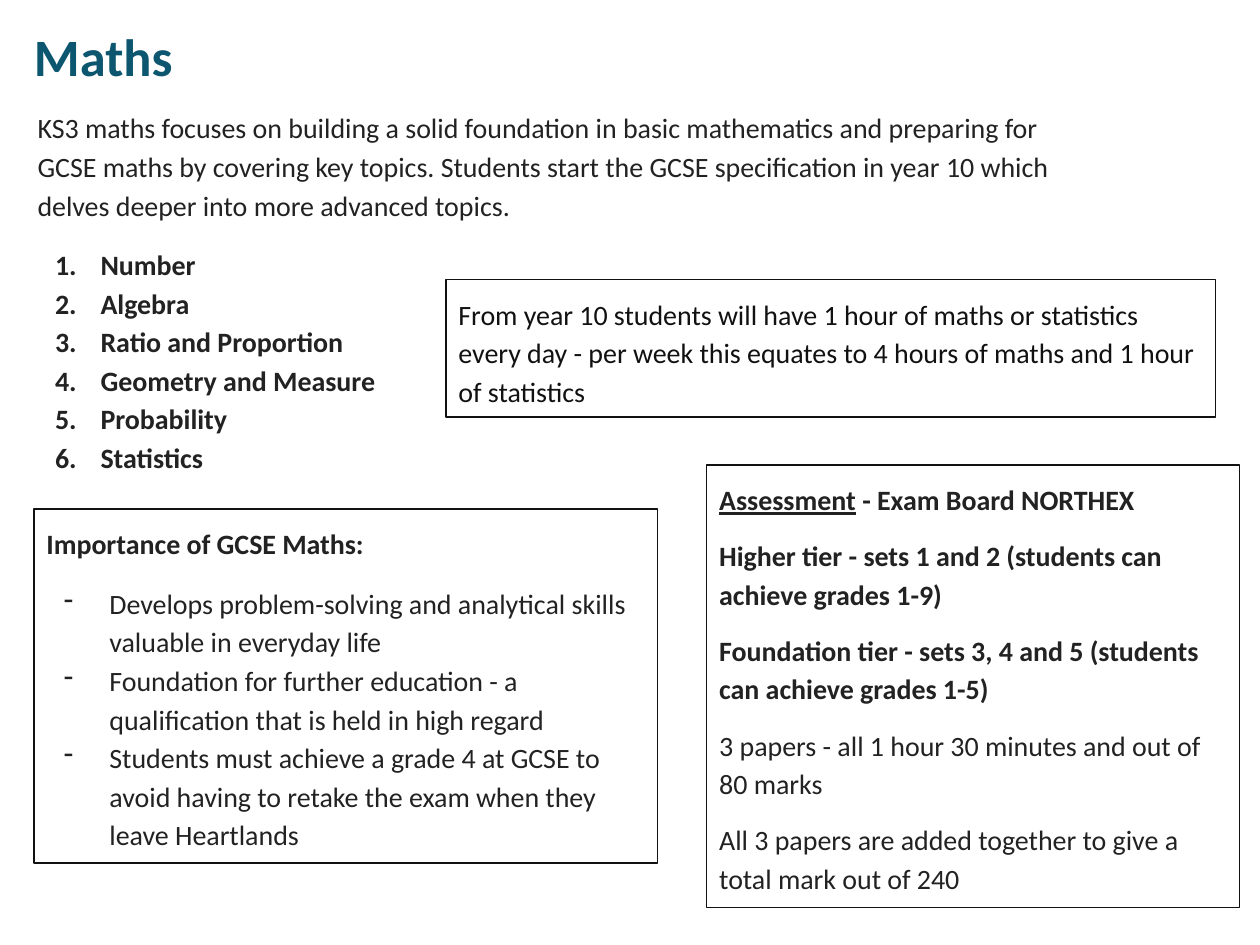
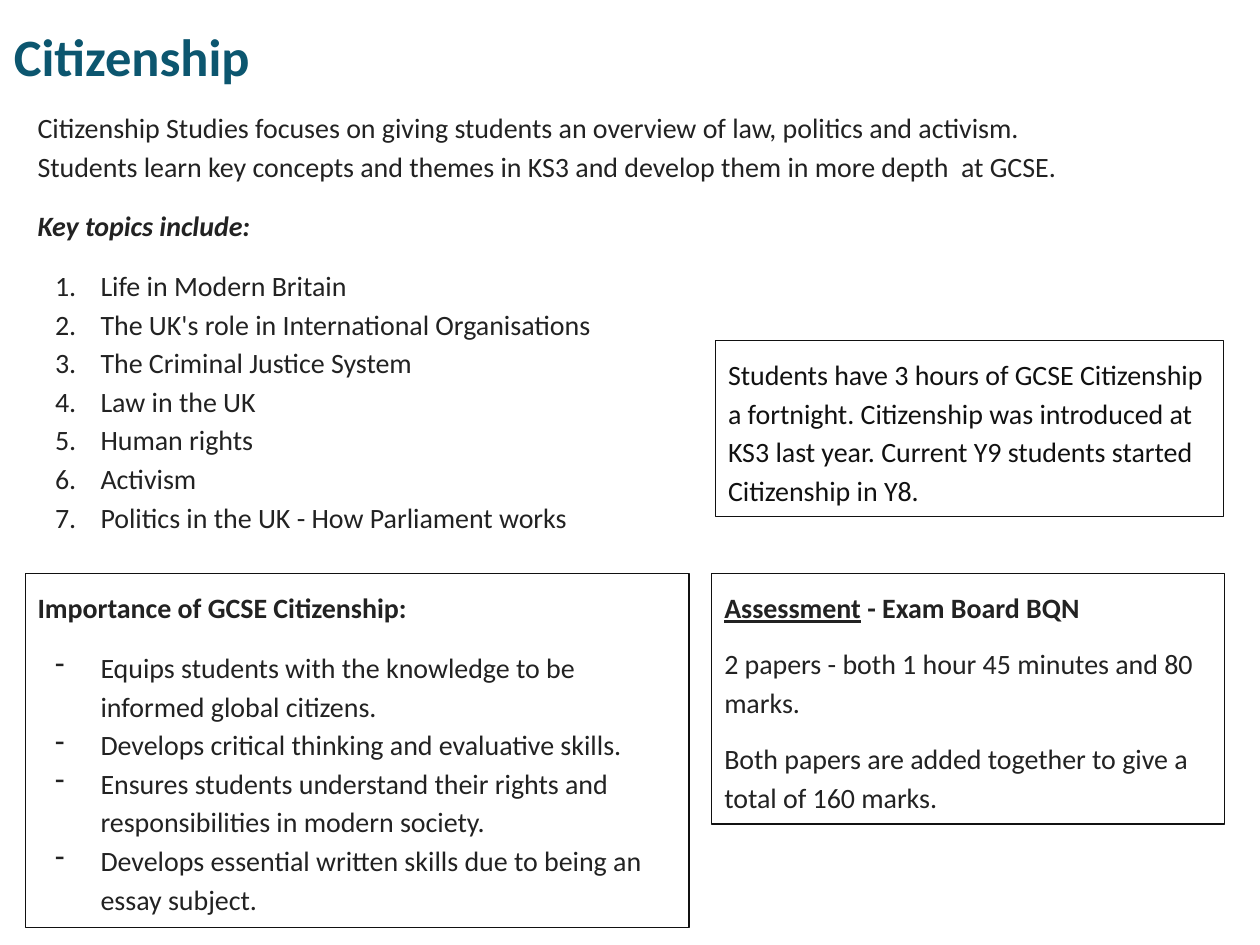
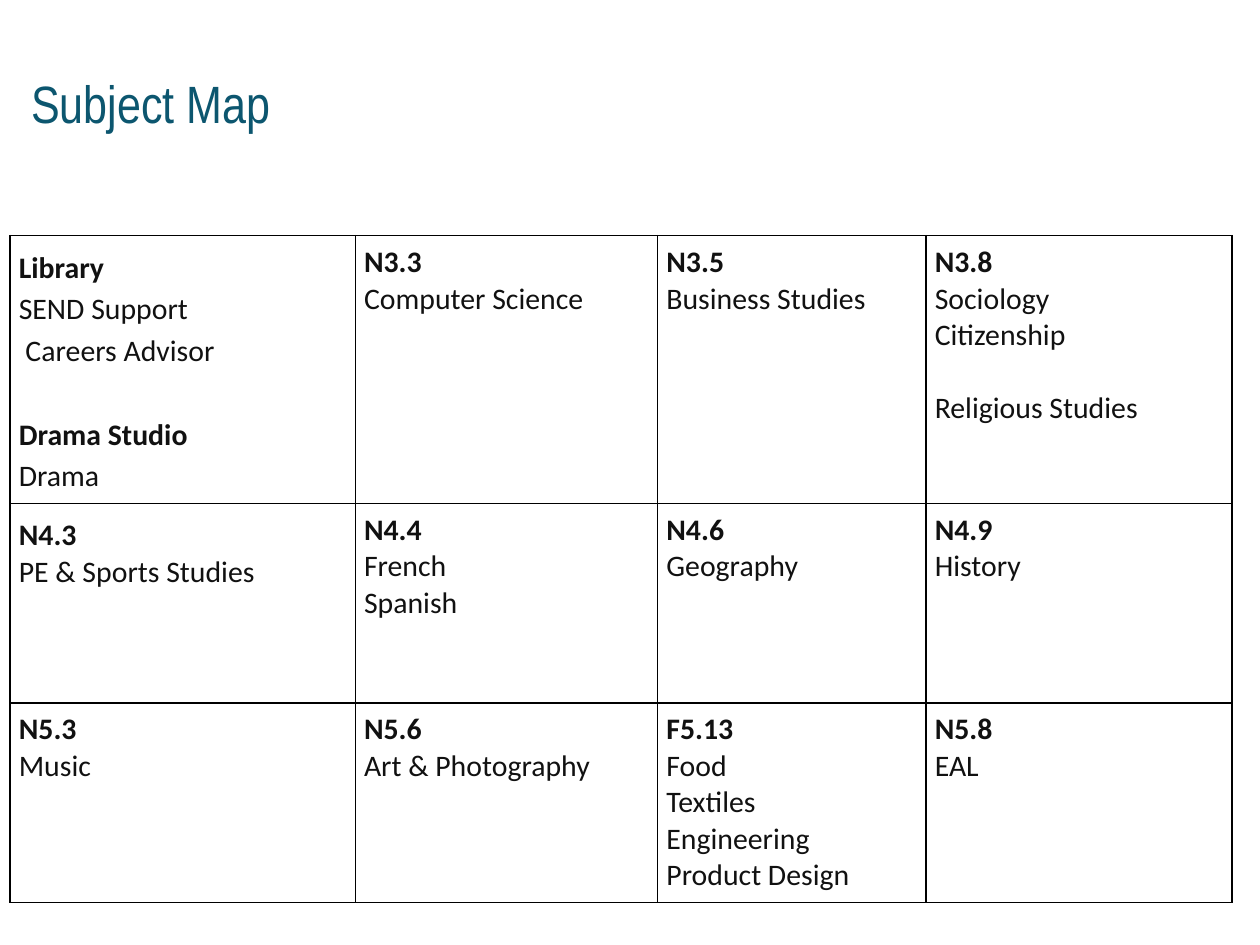
from lxml.etree import SubElement
from pptx import Presentation
from pptx.dml.color import RGBColor
from pptx.enum.shapes import MSO_SHAPE
from pptx.enum.text import MSO_ANCHOR, PP_ALIGN
from pptx.oxml.ns import qn
from pptx.util import Pt

COLOURS = {"title": "0C566F", "body": "222222", "dark": "111111", "grid": "000000"}
BODY_FONT = "Calibri"
MAP_FONT = "Arial Narrow"
LOOSE = 1.15  # line spacing
INSET = 7.2
HANGING = 26

SUBJECTS = [
    {
        "title": "Maths",
        "title_at": (19.44, 18.72, 561.6, 30.96),
        "intro_at": (14.4, 53.28, 622.08, 224.64),
        "intro": "KS3 maths focuses on building a solid foundation in basic mathematics and preparing "
                 "for GCSE maths by covering key topics. Students start the GCSE specification in "
                 "year 10 which delves deeper into more advanced topics.",
        "topics_heading": None,
        "topics_bold": True,
        "topics": ["Number", "Algebra", "Ratio and Proportion", "Geometry and Measure",
                   "Probability", "Statistics"],
        "assessment_at": (403.92, 265.68, 304.56, 252.72),
        "exam_board": "NORTHEX",
        "tiers": ["Higher tier - sets 1 and 2 (students can achieve grades 1-9)",
                  "Foundation tier - sets 3, 4 and 5 (students can achieve grades 1-5)"],
        "papers": ["3 papers - all 1 hour 30 minutes and out of 80 marks",
                   "All 3 papers are added together to give a total mark out of 240"],
        "importance_at": (19.44, 290.88, 356.4, 202.32),
        "reasons": ["Develops problem-solving and analytical skills valuable in everyday life",
                    "Foundation for further education - a qualification that is held in high regard",
                    "Students must achieve a grade 4 at GCSE to avoid having to retake the exam "
                    "when they leave Heartlands"],
        "hours_at": (254.88, 159.84, 439.92, 78.48),
        "hours": "From year 10 students will have 1 hour of maths or statistics every day - per week "
                 "this equates to 4 hours of maths and 1 hour of statistics",
    },
    {
        "title": "Citizenship",
        "title_at": (7.92, 18.72, 561.6, 30.96),
        "intro_at": (14.4, 53.28, 614.16, 259.2),
        "intro": "Citizenship Studies focuses on giving students an overview of law, politics and "
                 "activism. Students learn key concepts and themes in KS3 and develop them in more "
                 "depth  at GCSE.",
        "topics_heading": "Key topics include:",
        "topics_bold": False,
        "topics": ["Life in Modern Britain", "The UK's role in International Organisations",
                   "The Criminal Justice System", "Law in the UK", "Human rights", "Activism",
                   "Politics in the UK - How Parliament works"],
        "assessment_at": (406.8, 327.6, 293.04, 143.28),
        "exam_board": "BQN",
        "tiers": [],
        "papers": ["2 papers - both 1 hour 45 minutes and 80 marks.",
                   "Both papers are added together to give a total of 160 marks."],
        "importance_at": (14.4, 327.6, 379.44, 202.32),
        "reasons": ["Equips students with the knowledge to be informed global citizens.",
                    "Develops critical thinking and evaluative skills.",
                    "Ensures students understand their rights and responsibilities in modern society.",
                    "Develops essential written skills due to being an essay subject."],
        "hours_at": (408.96, 194.4, 290.16, 100.8),
        "hours": "Students have 3 hours of GCSE Citizenship a fortnight. Citizenship was introduced "
                 "at KS3 last year. Current Y9 students started Citizenship in Y8.",
    },
]

# Each cell holds groups of (room, subject, ...); a blank line's height parts the groups.
ROOM_MAP = [
    [[("Library", "SEND Support", " Careers Advisor"), ("Drama Studio", "Drama")],
     [("N3.3", "Computer Science")],
     [("N3.5", "Business Studies")],
     [("N3.8", "Sociology", "Citizenship"), ("", "Religious Studies")]],
    [[("N4.3", "PE & Sports Studies")],
     [("N4.4", "French", "Spanish")],
     [("N4.6", "Geography")],
     [("N4.9", "History")]],
    [[("N5.3", "Music")],
     [("N5.6", "Art & Photography")],
     [("F5.13", "Food", "Textiles", "Engineering", "Product Design")],
     [("N5.8", "EAL")]],
]
COLUMN_WIDTHS = (197.28, 172.8, 153.36, 174.96)
ROW_HEIGHTS = (153, 114, 114)


def add_span(para, text, size=16, font=BODY_FONT, colour="body", bold=False, italic=False,
             underline=False):
    span = para.add_run()
    span.text = text
    span.font.size = Pt(size)
    span.font.name = font
    span.font.color.rgb = RGBColor.from_string(COLOURS[colour])
    span.font.bold = bold
    span.font.italic = italic
    span.font.underline = underline


def add_bullet(para, bullet):
    """Give a hanging bullet: "1." numbers the paragraphs, any other text is the mark itself."""
    properties = para._p.get_or_add_pPr()
    properties.set("marL", str(Pt(36)))
    properties.set("indent", str(-Pt(HANGING)))
    colour = SubElement(properties, qn("a:buClr"))
    SubElement(colour, qn("a:srgbClr"), val=COLOURS["body"])
    if bullet == "1.":
        SubElement(properties, qn("a:buAutoNum"), type="arabicPeriod")
    else:
        SubElement(properties, qn("a:buChar"), char=bullet)


def add_para(frame, text, before=0, spacing=LOOSE, bullet=None, **style):
    """Fill the frame's empty first paragraph, or append one; the first has no space before."""
    first = not frame.text
    para = frame.paragraphs[0] if first else frame.add_paragraph()
    if bullet:
        add_bullet(para, bullet)
    para.alignment = PP_ALIGN.LEFT
    para.line_spacing = spacing
    para.space_before = Pt(0 if first else before)
    add_span(para, text, **style)
    return para


class Handout:
    def __init__(self):
        self.deck = Presentation()
        self.deck.slide_width, self.deck.slide_height = Pt(720), Pt(540)
        self.page = None

    def add_page(self):
        self.page = self.deck.slides.add_slide(self.deck.slide_layouts[6])

    def prepare(self, frame, anchor, insets):
        frame.word_wrap = True
        frame.vertical_anchor = anchor
        (frame.margin_left, frame.margin_top,
         frame.margin_right, frame.margin_bottom) = map(Pt, insets)
        return frame

    def text(self, at, anchor=MSO_ANCHOR.TOP, insets=(INSET,) * 4):
        box = self.page.shapes.add_textbox(*map(Pt, at))
        return self.prepare(box.text_frame, anchor, insets)

    def title(self, text, at, anchor=MSO_ANCHOR.BOTTOM, insets=(0, INSET, INSET, 0), **style):
        add_para(self.text(at, anchor, insets), text, spacing=1, size=30, colour="title", **style)

    def outlined_box(self, at):
        box = self.page.shapes.add_shape(MSO_SHAPE.RECTANGLE, *map(Pt, at))
        box.shadow.inherit = False
        box.fill.background()
        box.line.color.rgb = RGBColor.from_string(COLOURS["dark"])
        box.line.width = Pt(0.75)
        return self.prepare(box.text_frame, MSO_ANCHOR.TOP, (INSET,) * 4)

    def bullets(self, frame, texts, bullet, before=12, **style):
        for index, text in enumerate(texts):
            add_para(frame, text, before=0 if index else before, bullet=bullet, **style)

    def table(self, at, widths, heights):
        shape = self.page.shapes.add_table(len(heights), len(widths), *map(Pt, at),
                                           Pt(sum(widths)), Pt(sum(heights)))
        table = shape.table
        table.first_row = table.horz_banding = False
        for column, width in zip(table.columns, widths):
            column.width = Pt(width)
        for row, height in zip(table.rows, heights):
            row.height = Pt(height)
        for cell in table.iter_cells():
            self.style_cell(cell)
        return table

    def style_cell(self, cell):
        cell.margin_left = cell.margin_top = cell.margin_right = cell.margin_bottom = Pt(5)
        properties = cell._tc.get_or_add_tcPr()
        for side in "LRTB":
            line = SubElement(properties, qn(f"a:ln{side}"), w=str(Pt(1)))
            fill = SubElement(line, qn("a:solidFill"))
            SubElement(fill, qn("a:srgbClr"), val=COLOURS["grid"])
        cell.fill.background()


def add_subject(handout, subject):
    handout.add_page()
    handout.title(subject["title"], subject["title_at"], bold=True)

    intro = handout.text(subject["intro_at"])
    add_para(intro, subject["intro"])
    if subject["topics_heading"]:
        add_para(intro, subject["topics_heading"], before=12, bold=True, italic=True)
    handout.bullets(intro, subject["topics"], "1.", bold=subject["topics_bold"])

    assessment = handout.outlined_box(subject["assessment_at"])
    heading = add_para(assessment, "Assessment", bold=True, underline=True)
    add_span(heading, f" - Exam Board {subject['exam_board']}", bold=True)
    for text in subject["tiers"]:
        add_para(assessment, text, before=10, bold=True)
    for text in subject["papers"]:
        add_para(assessment, text, before=10)

    importance = handout.outlined_box(subject["importance_at"])
    add_para(importance, f"Importance of GCSE {subject['title']}:", bold=True)
    handout.bullets(importance, subject["reasons"], "-")

    add_para(handout.outlined_box(subject["hours_at"]), subject["hours"], colour="dark")


def fill_room(frame, groups, spacing, room_spacing):
    for room, *subjects in groups:
        gap = 20.75 * spacing
        if room:
            add_para(frame, room, before=gap, spacing=room_spacing, size=17, colour="dark", bold=True)
            gap = 0
        for subject in subjects:
            add_para(frame, subject, before=gap, spacing=spacing, size=17, colour="dark")
            gap = 0


def add_room_map(handout):
    handout.add_page()
    handout.title("Subject Map", (10.8, 35.28, 414, 46.08), MSO_ANCHOR.MIDDLE,
                  (INSET, 3.6, INSET, 3.6), font=MAP_FONT)
    table = handout.table((5.76, 134.64), COLUMN_WIDTHS, ROW_HEIGHTS)
    for row, rooms in enumerate(ROOM_MAP):
        for column, groups in enumerate(rooms):
            spacing = LOOSE if (row, column) == (0, 0) else 1
            room_spacing = LOOSE if column == 0 and row < 2 else 1
            fill_room(table.cell(row, column).text_frame, groups, spacing, room_spacing)


def main():
    handout = Handout()
    for subject in SUBJECTS:
        add_subject(handout, subject)
    add_room_map(handout)
    handout.deck.save("out.pptx")


if __name__ == "__main__":
    main()
